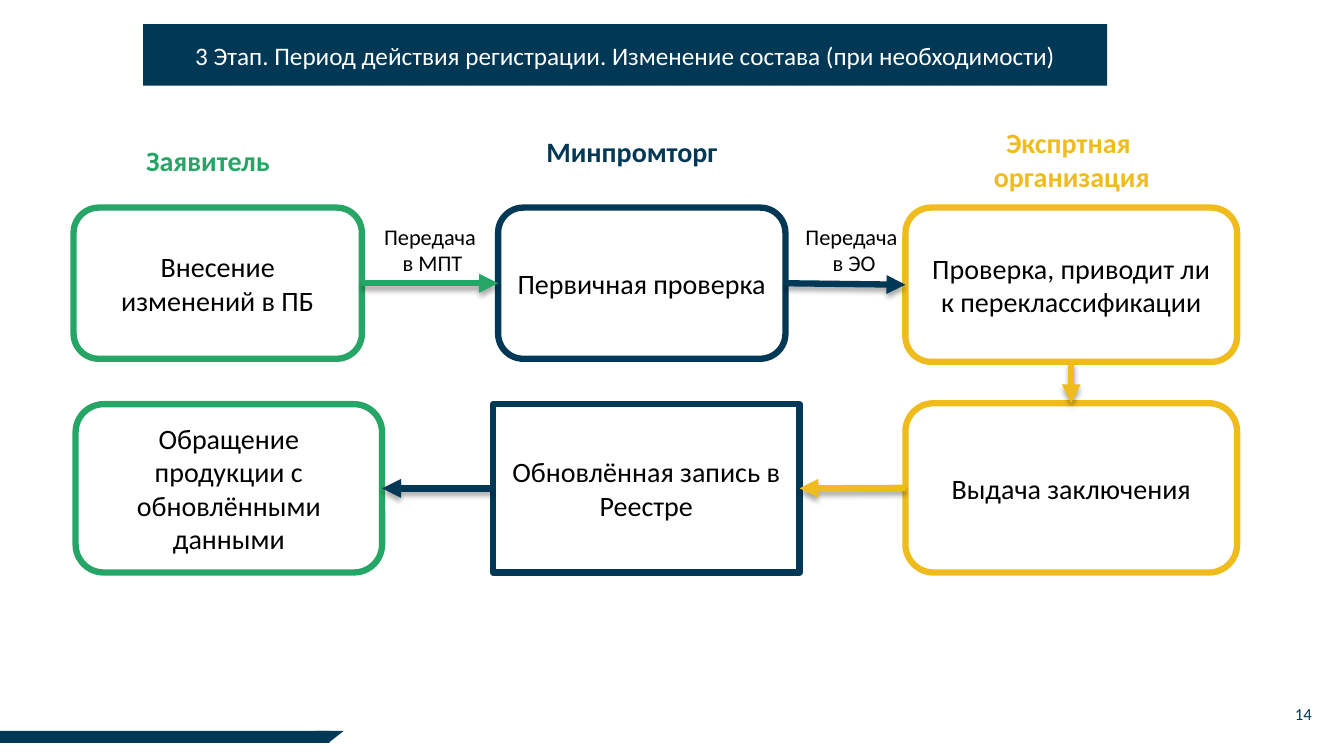
import pptx
import pptx.util
import pptx.dml.color
import pptx.enum.shapes
import pptx.enum.text
import pptx.oxml
import pptx.oxml.ns
from dataclasses import dataclass

SHAPE = pptx.enum.shapes.MSO_SHAPE
ALIGN = pptx.enum.text.PP_ALIGN
ANCHOR = pptx.enum.text.MSO_ANCHOR
AUTO = pptx.enum.text.MSO_AUTO_SIZE


@dataclass(frozen=True)
class Theme:
    font: str = "Calibri"
    green: str = "25A666"
    navy: str = "013856"
    yellow: str = "F0BC1D"
    white: str = "FFFFFF"
    black: str = "000000"
    number: str = "013958"
    title: int = 18
    body: int = 20
    label: int = 16
    small: int = 12
    line: float = 4.5


T = Theme()
PX = 9144

TITLE = "3 Этап. Период действия регистрации. Изменение состава (при необходимости)"
TITLE_AT = (142, 24, 956, 61)

STEPS = {
    "change": ("Внесение изменений в ПБ", (73, 206, 286, 150), T.green, SHAPE.ROUNDED_RECTANGLE),
    "check": ("Первичная проверка", (494, 206, 285, 150), T.navy, SHAPE.ROUNDED_RECTANGLE),
    "expert": ("Проверка, приводит ли к переклассификации", (898, 206, 329, 153), T.yellow,
               SHAPE.ROUNDED_RECTANGLE),
    "conclusion": ("Выдача заключения", (898, 400, 329, 168), T.yellow, SHAPE.ROUNDED_RECTANGLE),
    "record": ("Обновлённая запись в Реестре", (489, 401, 304, 167), T.navy, SHAPE.RECTANGLE),
    "market": ("Обращение продукции с обновлёнными данными", (75, 401, 304, 167), T.green,
               SHAPE.ROUNDED_RECTANGLE),
}

TOP, LEFT, BOTTOM, RIGHT = range(4)
ARROWS = [
    ("change", RIGHT, "check", LEFT),
    ("check", RIGHT, "expert", LEFT),
    ("expert", BOTTOM, "conclusion", TOP),
    ("conclusion", LEFT, "record", RIGHT),
    ("record", LEFT, "market", RIGHT),
]

TEXTS = [
    ("Заявитель", (135, 137, 161, 44), T.body, T.green, True, ALIGN.LEFT, False),
    ("Минпромторг", (532, 129, 208, 44), T.body, T.navy, True, ALIGN.LEFT, False),
    ("Экспртная \nорганизация", (911, 120, 304, 77), T.body, T.yellow, True, ALIGN.CENTER, True),
    ("Передача \nв МПТ", (368, 216, 122, 64), T.label, T.black, False, ALIGN.CENTER, False),
    ("Передача \nв ЭО", (786, 216, 122, 64), T.label, T.black, False, ALIGN.CENTER, False),
    ("14", (1194, 693, 117, 40), T.small, T.number, False, ALIGN.RIGHT, True),
]

FOOTER = [
    (SHAPE.ISOSCELES_TRIANGLE, (313, 725, 28, 11), 180),
    (SHAPE.RECTANGLE, (0, 725, 327, 12), 0),
]

SHADOW = (
    '<a:effectLst %s><a:outerShdw blurRad="50800" dist="38100" dir="5400000" rotWithShape="0">'
    '<a:srgbClr val="%s"><a:alpha val="35000"/></a:srgbClr></a:outerShdw></a:effectLst>'
    % (pptx.oxml.ns.nsdecls("a"), T.black)
)
ARROWHEAD = '<a:tailEnd %s type="triangle"/>' % pptx.oxml.ns.nsdecls("a")


def rgb(color):
    return pptx.dml.color.RGBColor.from_string(color)


def emu(box):
    return [pptx.util.Emu(v * PX) for v in box]


def write(tf, text, size, color, bold=False, align=ALIGN.CENTER, anchor=ANCHOR.MIDDLE):
    tf.text = text
    tf.vertical_anchor = anchor
    for p in tf.paragraphs:
        p.alignment = align
        for r in p.runs:
            r.font.name = T.font
            r.font.size = pptx.util.Pt(size)
            r.font.bold = bold
            r.font.color.rgb = rgb(color)


def paint(sp, fill, line=None):
    sp.fill.solid()
    sp.fill.fore_color.rgb = rgb(fill)
    if line:
        sp.line.color.rgb = rgb(line)
        sp.line.width = pptx.util.Pt(T.line)
    else:
        sp.line.fill.background()


def add_shape(slide, kind, box, fill, line=None):
    sp = slide.shapes.add_shape(kind, *emu(box))
    sp.shadow.inherit = False
    paint(sp, fill, line)
    return sp


def add_title(slide):
    sp = slide.shapes.title
    sp.left, sp.top, sp.width, sp.height = emu(TITLE_AT)
    paint(sp, T.navy)
    write(sp.text_frame, TITLE, T.title, T.white)
    sp.text_frame.word_wrap = True
    sp.text_frame.auto_size = AUTO.NONE


def add_text(slide, text, box, size, color, bold, align, wrap):
    tf = slide.shapes.add_textbox(*emu(box)).text_frame
    write(tf, text, size, color, bold, align, ANCHOR.TOP)
    tf.word_wrap = wrap


def add_arrow(slide, start, start_side, end, end_side, color):
    cx = slide.shapes.add_connector(pptx.enum.shapes.MSO_CONNECTOR.STRAIGHT, 0, 0, 0, 0)
    cx.begin_connect(start, start_side)
    cx.end_connect(end, end_side)
    cx.line.color.rgb = rgb(color)
    cx.line.width = pptx.util.Pt(T.line)
    cx.line._get_or_add_ln().append(pptx.oxml.parse_xml(ARROWHEAD))
    cx._element.spPr.append(pptx.oxml.parse_xml(SHADOW))


def main():
    prs = pptx.Presentation()
    prs.slide_width, prs.slide_height = emu((1333, 750))
    slide = prs.slides.add_slide(prs.slide_layouts[5])

    for kind, box, angle in FOOTER:
        add_shape(slide, kind, box, T.navy).rotation = angle
    add_title(slide)

    steps = {}
    for name, (text, box, color, kind) in STEPS.items():
        steps[name] = add_shape(slide, kind, box, T.white, color)
        write(steps[name].text_frame, text, T.body, T.black)
    for start, start_side, end, end_side in ARROWS:
        add_arrow(slide, steps[start], start_side, steps[end], end_side, STEPS[start][2])
    for item in TEXTS:
        add_text(slide, *item)

    prs.save("out.pptx")


if __name__ == "__main__":
    main()
